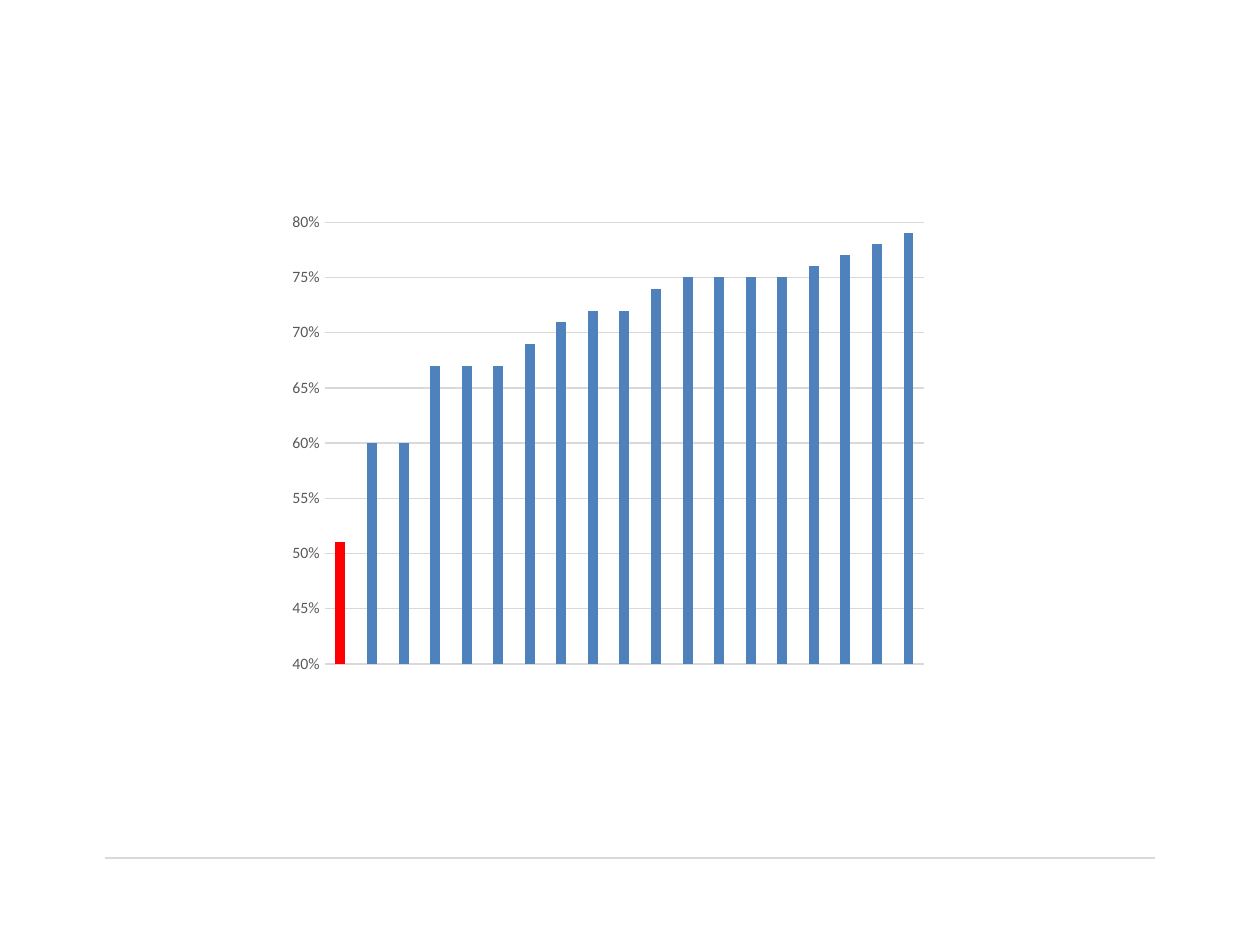
from lxml import etree
from pptx import Presentation
from pptx import util as u
from pptx.chart import data as cd
from pptx.dml.color import RGBColor as Rgb
from pptx.enum import chart as ec, shapes
from pptx.oxml import ns

# Content
SHARES = [0.51, 0.6, 0.6, 0.67, 0.67, 0.67, 0.69, 0.71, 0.72, 0.72,
          0.74, 0.75, 0.75, 0.75, 0.75, 0.76, 0.77, 0.78, 0.79]
LOW, HIGH, STEP = 0.4, 0.8, 0.05
MARKED = 0

THEME = {"font": "Calibri", "size": 10, "tick": 9, "text": "000000",
         "label": "595959", "rule": "D9D9D9", "bar": "4F81BD",
         "mark": "FF0000", "line": 0.75}

# Slide size in inches; places as shares of it
WIDE, HIGH_IN = 10, 7.5
CHART = (0.225, 0.215, 0.519, 0.508)
PLOT = {"x": 0.063, "y": 0.04, "w": 0.917, "h": 0.92}
RULE = {"left": 1 / 12, "right": 11 / 12, "top": 0.908}


def across(share):
    return u.Inches(WIDE * share)


def down(share):
    return u.Inches(HIGH_IN * share)


def ink(key):
    return Rgb.from_string(THEME[key])


def style(font, size, color):
    font.name = THEME["font"]
    font.size = u.Pt(THEME[size])
    font.color.rgb = ink(color)


def stroke(line):
    line.color.rgb = ink("rule")
    line.width = u.Pt(THEME["line"])


def paint(part, key):
    part.format.fill.solid()
    part.format.fill.fore_color.rgb = ink(key)


def place(chart):
    """Fix the inner plot area as shares of the chart."""
    area = chart.plots[0]._element.getparent()
    for old in area.findall(ns.qn("c:layout")):
        area.remove(old)
    box = etree.Element(ns.qn("c:layout"))
    area.insert(0, box)
    man = etree.SubElement(box, ns.qn("c:manualLayout"))
    rules = {"layoutTarget": "inner", "xMode": "edge", "yMode": "edge", **PLOT}
    for tag, val in rules.items():
        etree.SubElement(man, ns.qn("c:" + tag)).set("val", str(val))


def add_rule(slide):
    y = down(RULE["top"])
    rule = slide.shapes.add_connector(
        shapes.MSO_CONNECTOR.STRAIGHT,
        across(RULE["left"]), y, across(RULE["right"]), y)
    stroke(rule.line)
    etree.SubElement(rule._element.spPr, ns.qn("a:effectLst"))


def add_bars(slide):
    data = cd.CategoryChartData(number_format="0%")
    data.categories = [str(n) for n in range(1, len(SHARES) + 1)]
    data.add_series("Series 1", SHARES)
    x, y, w, h = CHART
    chart = slide.shapes.add_chart(
        ec.XL_CHART_TYPE.COLUMN_CLUSTERED,
        across(x), down(y), across(w), down(h), data).chart
    chart.has_title = chart.has_legend = False
    style(chart.font, "size", "text")
    place(chart)

    # Bars, with one marked
    plot = chart.plots[0]
    plot.vary_by_categories = False
    plot.gap_width, plot.overlap = 219, -27
    bars = plot.series[0]
    bars.invert_if_negative = False
    paint(bars, "bar")
    paint(bars.points[MARKED], "mark")

    # Axes
    chart.category_axis.visible = False
    axis = chart.value_axis
    axis.minimum_scale, axis.maximum_scale = LOW, HIGH
    axis.major_unit = STEP
    axis.major_tick_mark = axis.minor_tick_mark = ec.XL_TICK_MARK.NONE
    axis.format.line.fill.background()
    axis.has_major_gridlines = True
    stroke(axis.major_gridlines.format.line)
    labels = axis.tick_labels
    labels.number_format, labels.number_format_is_linked = "0%", False
    style(labels.font, "tick", "label")


def main():
    deck = Presentation()
    deck.slide_width, deck.slide_height = across(1), down(1)
    slide = deck.slides.add_slide(deck.slide_layouts[6])
    add_rule(slide)
    add_bars(slide)
    deck.save("out.pptx")


if __name__ == "__main__":
    main()
